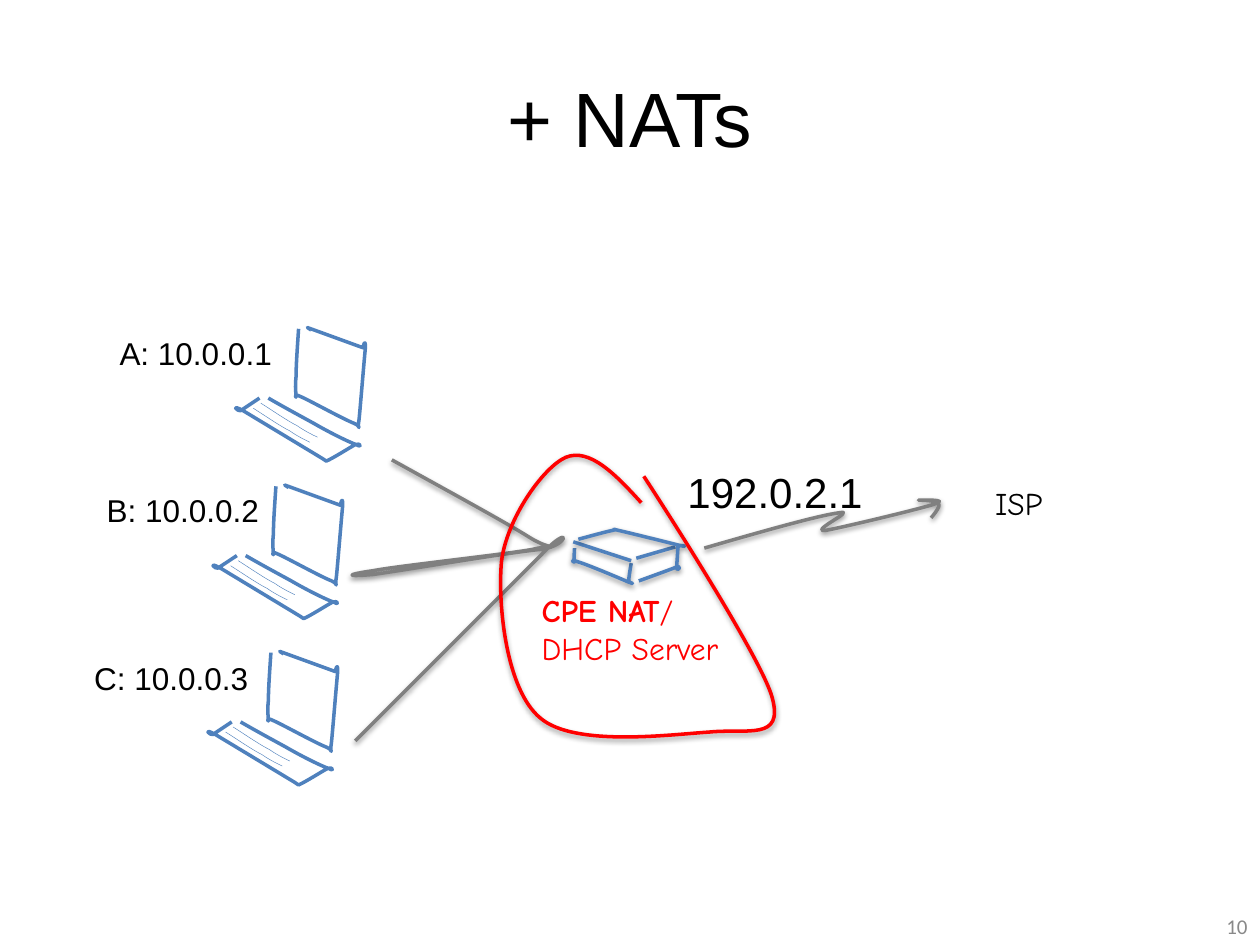
"""Build a slide showing three hosts behind a NAT that connects to an ISP."""
from lxml.etree import SubElement
from pptx import Presentation
from pptx.dml.color import RGBColor
from pptx.enum.text import MSO_ANCHOR, PP_ALIGN
from pptx.oxml.ns import qn
from pptx.util import Cm, Pt

BLACK = RGBColor(0x00, 0x00, 0x00)
RED = RGBColor(0xFF, 0x00, 0x00)
BLUE = RGBColor(0x4F, 0x81, 0xBD)
GRAY = RGBColor(0x80, 0x80, 0x80)
LIGHT_GRAY = RGBColor(0x89, 0x89, 0x89)
CM_PER_INCH = 2.54

presentation = Presentation()
presentation.slide_width = Cm(25.4)
presentation.slide_height = Cm(19.05)
slide = presentation.slides.add_slide(presentation.slide_layouts[6])


def add_stroke(segments, color, width=2, shadow=False, offset=(0, 0)):
    """Draw lines (x, y) and cubic curves (six numbers), given in inches."""
    points = [
        (Cm((x + offset[0]) * CM_PER_INCH), Cm((y + offset[1]) * CM_PER_INCH))
        for segment in segments
        for x, y in zip(segment[::2], segment[1::2])
    ]
    builder = slide.shapes.build_freeform(*points[0], scale=1.0)
    builder.add_line_segments(points[1:], close=False)
    shape = builder.convert_to_shape()
    steps = iter(shape._element.findall(".//" + qn("a:lnTo")))
    for segment in segments[1:]:
        curve = next(steps)
        if len(segment) == 6:
            curve.tag = qn("a:cubicBezTo")
            for step in (next(steps), next(steps)):
                curve.append(step[0])
                step.getparent().remove(step)
    shape.fill.background()
    shape.line.color.rgb = color
    shape.line.width = Pt(width)
    shape.shadow.inherit = False
    if shadow:
        effects = shape._element.spPr.find(qn("a:effectLst"))
        outer = SubElement(effects, qn("a:outerShdw"), blurRad=str(Pt(3.1)),
                           dist=str(Pt(1.6)), dir="5400000", rotWithShape="0")
        tint = SubElement(outer, qn("a:srgbClr"), val="000000")
        SubElement(tint, qn("a:alpha"), val="38000")


def add_text(lines, left, top, width, height, size, font="Arial", color=BLACK,
             align=PP_ALIGN.LEFT, anchor=MSO_ANCHOR.TOP):
    """Add a text box, placed in centimetres, and return its text frame."""
    box = slide.shapes.add_textbox(Cm(left), Cm(top), Cm(width), Cm(height))
    frame = box.text_frame
    frame.word_wrap = True
    frame.vertical_anchor = anchor
    frame.text = lines
    for paragraph in frame.paragraphs:
        paragraph.alignment = align
        paragraph.font.size = Pt(size)
        paragraph.font.name = font
        paragraph.font.color.rgb = color
    return frame


add_text("+ NATs", 0.74, 0.76, 23.93, 3.18, 44,
         align=PP_ALIGN.CENTER, anchor=MSO_ANCHOR.MIDDLE)
add_text("10", 19.48, 18.16, 5.92, 1.02, 12, "Calibri", LIGHT_GRAY,
         PP_ALIGN.RIGHT, MSO_ANCHOR.MIDDLE)

laptop_screen = [
    (2.37, 2.61), (2.36, 2.76, 2.35, 2.9, 2.35, 2.99),
    (2.34, 3.08, 2.35, 3.12, 2.35, 3.15), (2.36, 3.17, 2.31, 3.11, 2.39, 3.15),
    (2.46, 3.18, 2.73, 3.33, 2.81, 3.36), (2.88, 3.39, 2.83, 3.43, 2.85, 3.33),
    (2.86, 3.23, 2.89, 2.86, 2.9, 2.76), (2.9, 2.67, 2.88, 2.76, 2.88, 2.76),
    (2.44, 2.6), (2.47, 2.62),
]
laptop_base = [
    (2.13, 3.16), (2.25, 3.23, 2.38, 3.3, 2.49, 3.36),
    (2.61, 3.43, 2.77, 3.51, 2.83, 3.53), (2.88, 3.56, 2.86, 3.51, 2.82, 3.53),
    (2.78, 3.55, 2.64, 3.64, 2.59, 3.66), (2.56, 3.64), (1.93, 3.26),
    (1.82, 3.2, 1.89, 3.27, 1.91, 3.26), (1.94, 3.24, 2.06, 3.16, 2.06, 3.16),
]
key_row = [
    (2.01, 3.24), (2.12, 3.31, 2.22, 3.38, 2.3, 3.42),
    (2.37, 3.47, 2.46, 3.51, 2.46, 3.51),
]
for x, y in [(-0.18, 1.25), (-0.22, 2.57), (0, 0)]:
    add_stroke(laptop_screen, BLUE, offset=(x, y))
    add_stroke(laptop_base, BLUE, offset=(x, y))
    add_stroke(key_row, BLUE, 0.25, offset=(x, y))
    add_stroke(key_row, BLUE, 0.25, offset=(x + 0.06, y - 0.04))

router_strokes = [
    [(4.56, 4.35), (4.56, 4.39, 4.55, 4.44, 4.56, 4.46),
     (4.56, 4.47, 4.51, 4.43, 4.59, 4.46), (4.66, 4.48, 4.92, 4.59, 4.99, 4.62),
     (5.06, 4.64, 4.99, 4.63, 4.99, 4.61), (4.99, 4.58, 5.01, 4.47, 5.01, 4.47)],
    [(4.55, 4.3), (5.01, 4.45)],
    [(5.05, 4.43), (5.36, 4.34)],
    [(4.59, 4.28), (4.7, 4.25, 4.81, 4.22, 4.86, 4.21),
     (4.92, 4.2, 4.82, 4.19, 4.91, 4.21), (5, 4.23, 5.32, 4.31, 5.4, 4.33),
     (5.48, 4.35, 5.39, 4.31, 5.38, 4.34), (5.38, 4.37, 5.37, 4.49, 5.37, 4.51),
     (5.37, 4.54, 5.42, 4.49, 5.37, 4.5), (5.32, 4.52, 5.07, 4.61, 5.07, 4.61)],
]
for stroke in router_strokes:
    add_stroke(stroke, BLUE, shadow=True)

host_links = [
    (3.11, 3.65), (3.56, 3.9, 4.02, 4.15, 4.21, 4.27),
    (4.39, 4.38, 4.44, 4.31, 4.23, 4.36), (4.02, 4.4, 3.17, 4.49, 2.96, 4.53),
    (2.75, 4.56, 2.73, 4.58, 2.96, 4.56), (3.18, 4.53, 4.07, 4.38, 4.3, 4.36),
    (4.52, 4.33, 4.54, 4.14, 4.3, 4.4), (4.05, 4.65, 2.82, 5.88, 2.82, 5.88),
]
add_stroke(host_links, GRAY, shadow=True)

for label, left, top in [("A: 10.0.0.1", 2.16, 6.6), ("B: 10.0.0.2", 1.9, 9.78),
                         ("C: 10.0.0.3", 1.65, 13.16)]:
    add_text(label, left, top, 3.66, 1.02, 18)

nat_frame = add_text("\nDHCP Server", 10.67, 11.79, 5.11, 2.57, 18, "Comic Neue", RED)
nat_name = nat_frame.paragraphs[0].add_run()
nat_name.text = "CPE NAT"
nat_name.font.bold = True
nat_frame.paragraphs[0].add_run().text = "/"

isp_arrow = [
    (5.59, 4.35), (6.04, 4.22, 6.5, 4.09, 6.66, 4.07),
    (6.81, 4.04, 6.42, 4.22, 6.55, 4.21), (6.67, 4.19, 7.3, 4.04, 7.42, 4),
    (7.55, 3.96, 7.29, 3.97, 7.29, 3.97), (7.3, 3.97, 7.44, 3.97, 7.45, 4),
    (7.47, 4.02, 7.39, 4.11, 7.39, 4.11),
]
add_stroke(isp_arrow, GRAY, shadow=True)
add_text("192.0.2.1", 13.61, 9.27, 4.09, 1.27, 24)
add_text("ISP", 19.81, 9.63, 1.75, 1.02, 18, "Comic Neue")

nat_circle = [
    (5.09, 3.99), (4.89, 3.77, 4.68, 3.55, 4.49, 3.63),
    (4.31, 3.71, 4.02, 4.12, 3.98, 4.46), (3.95, 4.81, 4.02, 5.48, 4.29, 5.7),
    (4.56, 5.93, 5.32, 5.83, 5.63, 5.81), (5.94, 5.78, 6.22, 5.88, 6.13, 5.54),
    (6.04, 5.2, 5.11, 3.78, 5.11, 3.78),
]
add_stroke(nat_circle, RED, shadow=True)

presentation.save("out.pptx")
